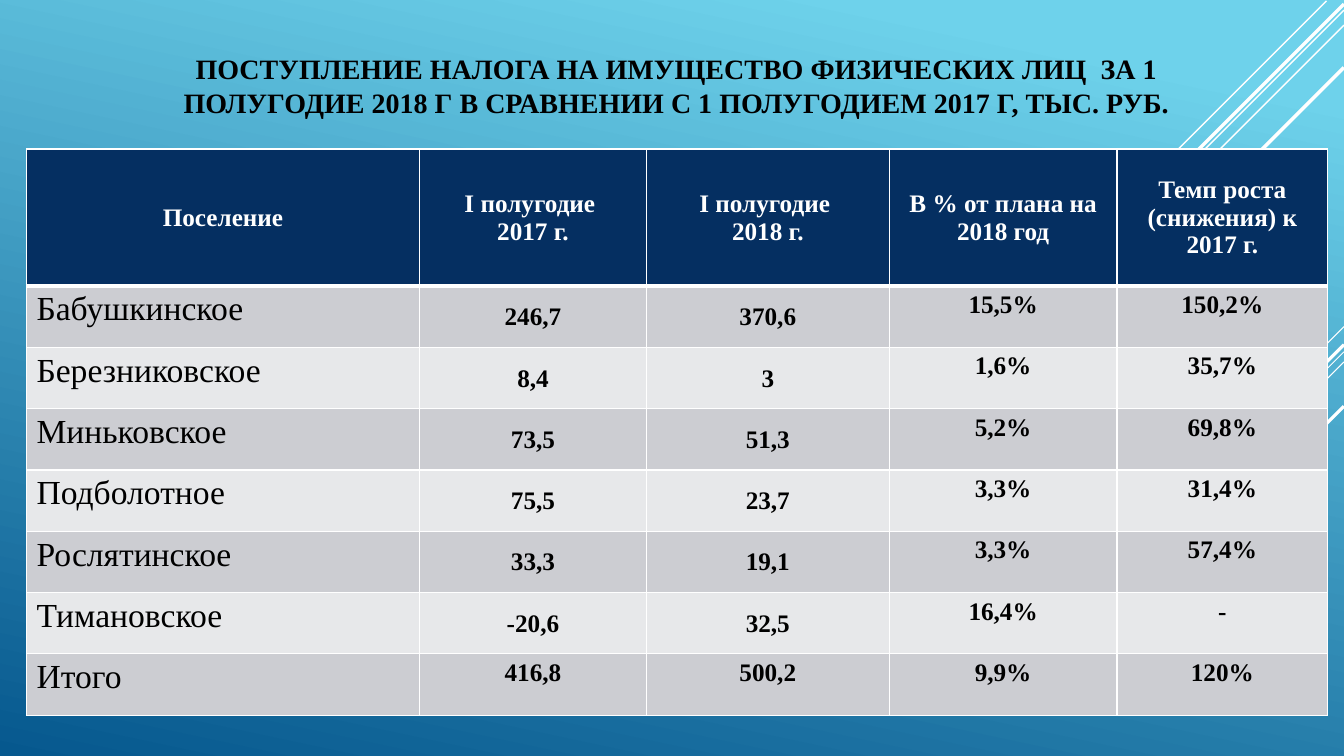
from lxml import etree
from pptx import Presentation
from pptx.dml.color import RGBColor
from pptx.enum.shapes import MSO_CONNECTOR
from pptx.enum.text import MSO_ANCHOR, PP_ALIGN
from pptx.oxml.ns import qn
from pptx.util import Pt

STRAIGHT = MSO_CONNECTOR.STRAIGHT
TOP, MIDDLE, BOTTOM = MSO_ANCHOR.TOP, MSO_ANCHOR.MIDDLE, MSO_ANCHOR.BOTTOM
LEFT, CENTER = PP_ALIGN.LEFT, PP_ALIGN.CENTER

FONT = "Times New Roman"
COLORS = {
    "sky": "6ED2EB", "sea": "06588E", "white": "FFFFFF", "black": "000000",
    "header": "052F61", "odd": "CCCDD2", "even": "E7E8EA",
}
TITLE = ("ПОСТУПЛЕНИЕ НАЛОГА НА ИМУЩЕСТВО ФИЗИЧЕСКИХ ЛИЦ  ЗА 1 ПОЛУГОДИЕ "
         "2018 Г В СРАВНЕНИИ С 1 ПОЛУГОДИЕМ 2017 Г, ТЫС. РУБ.")
ROWS = [
    ("Поселение", "I полугодие \n2017 г.", "I полугодие \n2018 г.",
     "В % от плана на 2018 год", "Темп роста (снижения) к 2017 г."),
    ("Бабушкинское", "246,7", "370,6", "15,5%", "150,2%"),
    ("Березниковское", "8,4", "3", "1,6%", "35,7%"),
    ("Миньковское", "73,5", "51,3", "5,2%", "69,8%"),
    ("Подболотное", "75,5", "23,7", "3,3%", "31,4%"),
    ("Рослятинское", "33,3", "19,1", "3,3%", "57,4%"),
    ("Тимановское", "-20,6", "32,5", "16,4%", "-"),
    ("Итого", "416,8", "500,2", "9,9%", "120%"),
]
COL_WIDTHS = (280.8, 162, 173.5, 162.7, 150.5)
HEADER_HEIGHT, ROW_HEIGHT = 97.9, 43.8
# right end x, right end y, horizontal run, line width
RAYS = [
    (960, 233.3, 72, 0.75), (960, 251.3, 234.7, 0.75), (960, 258.5, 149, 0.75),
    (960, 246.2, 137.5, 2.25), (960, 290.2, 100, 2.25),
    (947.5, 0.7, 300, 1), (960, 7.2, 478.8, 1), (960, 18, 390.2, 1),
    (960, 2.9, 382, 2.5), (960, 48.2, 342, 2.5),
]


def rgb(name):
    return RGBColor.from_string(COLORS[name])


def style(tf, size, bold, color, align):
    for p in tf.paragraphs:
        p.alignment = align
        p.font.name, p.font.size, p.font.bold = FONT, Pt(size), bold
        p.font.color.rgb = rgb(color)


def add_background(s):
    fill = s.background.fill
    fill.gradient()
    fill.gradient_angle = 258
    for stop, name, pos in zip(fill.gradient_stops, ("sky", "sea"), (0.1, 1)):
        stop.color.rgb = rgb(name)
        stop.position = pos


def add_ray(s, x, y, run, width):
    line = s.shapes.add_connector(STRAIGHT, Pt(x), Pt(y), Pt(x - run), Pt(y + run))
    line.line.color.rgb = rgb("white")
    line.line.width = Pt(width)
    etree.SubElement(line._element.spPr, qn("a:effectLst"))


def add_title(s):
    tf = s.shapes.add_textbox(Pt(123.1), Pt(28.1), Pt(720), Pt(60.5)).text_frame
    tf.word_wrap = True
    tf.vertical_anchor = BOTTOM
    tf.text = TITLE
    style(tf, 20, True, "black", CENTER)


def set_borders(cell, widths):
    tc_pr = cell._tc.get_or_add_tcPr()
    for i, (side, width) in enumerate(zip("LRTB", widths)):
        ln = etree.Element(qn(f"a:ln{side}"), w=str(Pt(width)))
        fill = etree.SubElement(ln, qn("a:solidFill"))
        etree.SubElement(fill, qn("a:srgbClr"), val=COLORS["white"])
        tc_pr.insert(i, ln)


def fill_cell(cell, text, row, col):
    header, name = row == 0, col == 0
    measured = col in (1, 2) and 0 < row < len(ROWS) - 1
    cell.text = text
    cell.vertical_anchor = MIDDLE if header or measured else TOP
    if measured:
        cell.margin_left = cell.margin_right = cell.margin_top = Pt(0.7)
        cell.margin_bottom = Pt(0)
    style(cell.text_frame, 24 if name and not header else 18, header or not name,
          "white" if header else "black", LEFT if name and not header else CENTER)
    cell.fill.solid()
    cell.fill.fore_color.rgb = rgb("header" if header else "odd" if row % 2 else "even")
    set_borders(cell, (1, 1, 3 if row == 1 else 1, 3 if header else 1))


def add_tax_table(s):
    heights = [HEADER_HEIGHT] + [ROW_HEIGHT] * (len(ROWS) - 1)
    table = s.shapes.add_table(len(ROWS), len(COL_WIDTHS), Pt(18.9), Pt(106.4),
                               Pt(sum(COL_WIDTHS)), Pt(sum(heights))).table
    for column, width in zip(table.columns, COL_WIDTHS):
        column.width = Pt(width)
    for r, (values, height) in enumerate(zip(ROWS, heights)):
        table.rows[r].height = Pt(height)
        for c, text in enumerate(values):
            fill_cell(table.cell(r, c), text, r, c)


def main():
    """Build the slide on property tax receipts by settlement."""
    prs = Presentation()
    prs.slide_width, prs.slide_height = Pt(960), Pt(540)
    s = prs.slides.add_slide(prs.slide_layouts[6])
    add_background(s)
    for ray in RAYS:
        add_ray(s, *ray)
    add_title(s)
    add_tax_table(s)
    prs.save("out.pptx")


if __name__ == "__main__":
    main()
